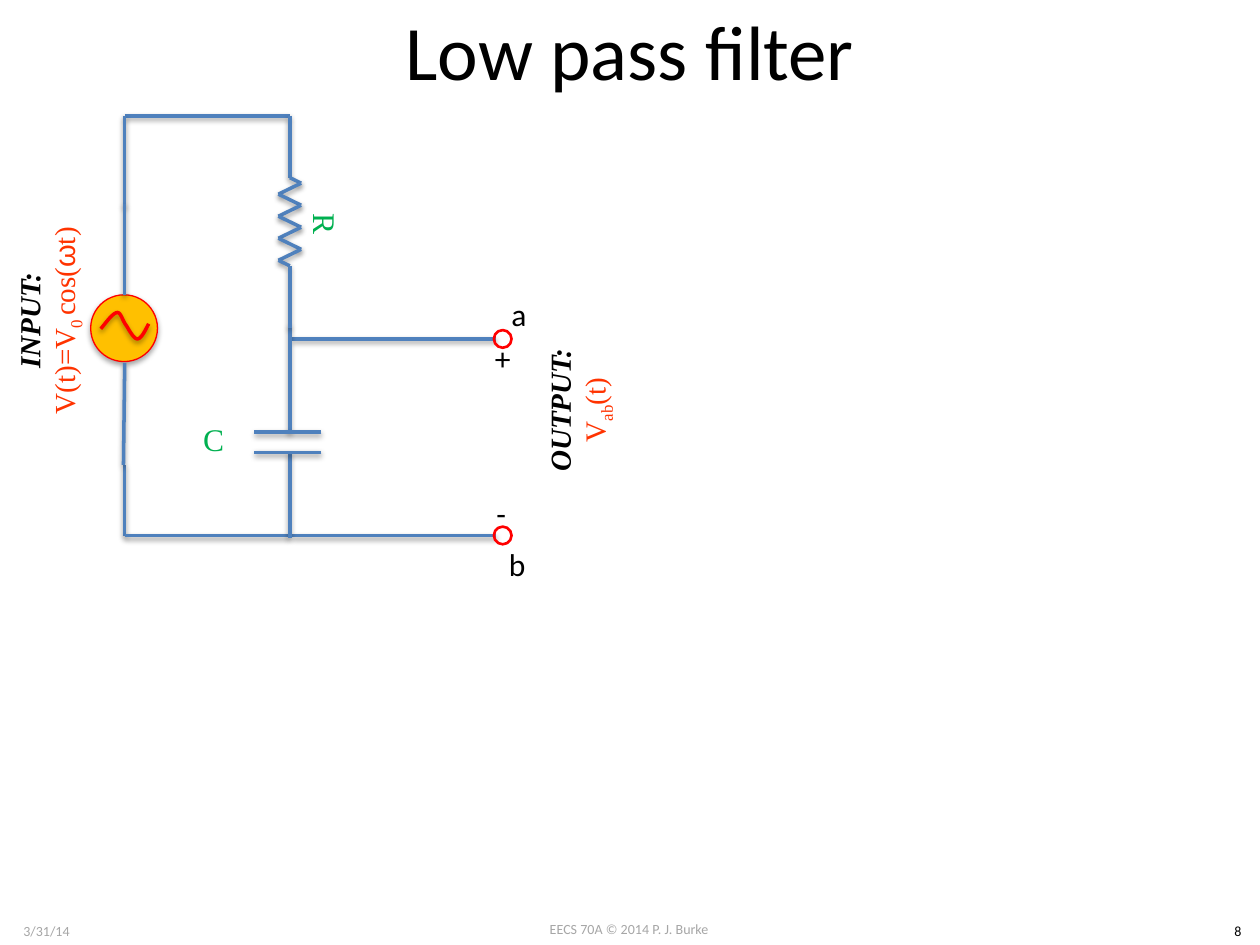
from dataclasses import dataclass
from itertools import pairwise

from lxml import etree
from pptx import Presentation
from pptx.dml.color import RGBColor
from pptx.enum.shapes import MSO_CONNECTOR, MSO_SHAPE
from pptx.enum.text import MSO_ANCHOR, PP_ALIGN
from pptx.oxml.ns import qn
from pptx.util import Emu, Inches, Pt

STRAIGHT, OVAL = MSO_CONNECTOR.STRAIGHT, MSO_SHAPE.OVAL
LEFT, CENTER = PP_ALIGN.LEFT, PP_ALIGN.CENTER
TOP_ANCHOR, MIDDLE = MSO_ANCHOR.TOP, MSO_ANCHOR.MIDDLE

BLACK = RGBColor(0x00, 0x00, 0x00)
GRAY = RGBColor(0xA6, 0xA6, 0xA6)
WIRE_BLUE = RGBColor(0x4F, 0x81, 0xBD)
RED = RGBColor(0xFF, 0x00, 0x00)
ORANGE_RED = RGBColor(0xFF, 0x33, 0x00)
AMBER = RGBColor(0xFF, 0xC0, 0x00)
GREEN = RGBColor(0x00, 0xB0, 0x50)
SANS, SERIF, SYMBOL = "Calibri", "Times New Roman", "Arial"

# Circuit grid in inches: columns, then rows
SOURCE, BRANCH, OUTPUT = 0.99, 2.3, 3.94
TOP, NODE_A, BOTTOM = 0.92, 2.69, 4.25
SOURCE_TOP, SOURCE_BOTTOM = 2.34, 2.88
RESISTOR_TOP, RESISTOR_BOTTOM = 1.41, 2.11
PLATE_TOP, PLATE_BOTTOM = 3.43, 3.59
TERMINAL_SIZE = 0.14

Point = tuple[float, float]
Box = tuple[float, float, float, float]


@dataclass(frozen=True)
class Label:
    text: str
    box: Box
    size: float = 18
    font: str = SANS
    color: RGBColor = BLACK
    align: PP_ALIGN = LEFT
    anchor: MSO_ANCHOR = TOP_ANCHOR
    wrap: bool = False
    rotation: float = 0


@dataclass(frozen=True)
class Part:
    text: str
    font: str = SERIF
    subscript: bool = False


@dataclass(frozen=True)
class Signal:
    heading: str
    formula: tuple[Part, ...]
    box: Box


FOOTERS = [
    Label("EECS 70A © 2014 P. J. Burke", (3.83, 7.26, 2.33, 0.24), 8, color=GRAY, align=CENTER, wrap=True),
    Label("3/31/14", (0, 7.27, 0.74, 0.24), 8, color=GRAY, align=CENTER, wrap=True),
    Label("8", (9.65, 7.27, 0.35, 0.24), 8, align=CENTER, wrap=True),
]
TERMINAL_LABELS = [
    Label("a", (3.96, 2.29, 0.32, 0.4)),
    Label("b", (3.94, 4.28, 0.34, 0.4)),
    Label("+", (3.83, 2.64, 0.33, 0.4)),
    Label("-", (3.84, 3.87, 0.28, 0.4)),
]
CAPACITOR_LABEL = Label("C", (1.1, 3.12, 1.19, 0.73), 18, SERIF, GREEN, CENTER, MIDDLE, True)
RESISTOR_LABEL = Label("R", (1.99, 1.41, 1.19, 0.73), 18, SERIF, GREEN, CENTER, MIDDLE, True, 90)
SIGNALS = [
    Signal("INPUT:",
           (Part("V(t)=V"), Part("0 ", subscript=True), Part("cos("), Part("ω", SYMBOL), Part("t)")),
           (-0.67, 2.24, 2.11, 0.61)),
    Signal("OUTPUT:",
           (Part("V"), Part("ab", subscript=True), Part("(t)")),
           (3.54, 2.95, 2.11, 0.61)),
]
WIRES = [
    ((SOURCE, 3.69), (SOURCE, BOTTOM)),
    ((SOURCE, BOTTOM), (BRANCH, BOTTOM)),
    ((BRANCH, TOP), (SOURCE, TOP)),
    ((SOURCE, 1.64), (SOURCE, TOP)),
    ((BRANCH + 0.02, NODE_A), (OUTPUT, NODE_A)),
    ((BRANCH + 0.02, BOTTOM), (OUTPUT, BOTTOM)),
    ((BRANCH, 2.58), (BRANCH, PLATE_TOP)),
    ((BRANCH, PLATE_BOTTOM), (BRANCH, 4.27)),
    ((2.55, PLATE_TOP), (2.02, PLATE_TOP)),
    ((2.55, PLATE_BOTTOM), (2.02, PLATE_BOTTOM)),
]
# Sine symbol: start point, then two handles and an end point per curve
SINE = [(0.8, 2.61), (0.85, 2.55), (0.89, 2.49), (0.93, 2.48), (0.96, 2.48), (0.97, 2.54),
        (1, 2.58), (1.02, 2.61), (1.06, 2.69), (1.09, 2.69), (1.12, 2.69), (1.15, 2.63), (1.18, 2.57)]


def add_shadow(shape, opacity: int = 38, distance: float = 1.6) -> None:
    effects = etree.SubElement(shape._element.spPr, qn("a:effectLst"))
    outer = etree.SubElement(effects, qn("a:outerShdw"), blurRad=str(Pt(3.1)),
                             dist=str(Pt(distance)), dir="5400000", rotWithShape="0")
    color = etree.SubElement(outer, qn("a:srgbClr"), val=str(BLACK))
    etree.SubElement(color, qn("a:alpha"), val=str(opacity * 1000))


def add_wire(shapes, start: Point, end: Point) -> None:
    wire = shapes.add_connector(STRAIGHT, *(Inches(v) for v in start + end))
    wire.line.color.rgb = WIRE_BLUE
    wire.line.width = Pt(2)
    add_shadow(wire)


def add_circle(shapes, box: Box, width: float):
    circle = shapes.add_shape(OVAL, *(Inches(v) for v in box))
    circle.line.color.rgb = RED
    circle.line.width = Pt(width)
    return circle


def add_text_frame(shapes, box: Box, anchor: MSO_ANCHOR, wrap: bool, rotation: float):
    holder = shapes.add_textbox(*(Inches(v) for v in box))
    holder.rotation = rotation
    frame = holder.text_frame
    frame.word_wrap = wrap
    frame.vertical_anchor = anchor
    return frame


def set_font(font, name: str, size: float, color: RGBColor) -> None:
    font.name = name
    font.size = Pt(size)
    font.color.rgb = color


def add_label(shapes, label: Label) -> None:
    frame = add_text_frame(shapes, label.box, label.anchor, label.wrap, label.rotation)
    paragraph = frame.paragraphs[0]
    paragraph.text = label.text
    paragraph.alignment = label.align
    set_font(paragraph.font, label.font, label.size, label.color)


def add_signal(shapes, signal: Signal) -> None:
    frame = add_text_frame(shapes, signal.box, MIDDLE, True, 270)
    heading, formula = frame.paragraphs[0], frame.add_paragraph()
    heading.text = signal.heading
    heading.font.bold = heading.font.italic = True
    for paragraph, color in ((heading, BLACK), (formula, ORANGE_RED)):
        paragraph.alignment = CENTER
        set_font(paragraph.font, SERIF, 16.6, color)
    for part in signal.formula:
        run = formula.add_run()
        run.text = part.text
        run.font.name = part.font
        if part.subscript:
            run._r.get_or_add_rPr().set("baseline", "-25000")


def curve_points(handles: list[Point], steps: int = 12) -> list[Point]:
    points = [handles[0]]
    for i in range(0, len(handles) - 1, 3):
        for t in (step / steps for step in range(1, steps + 1)):
            weights = ((1 - t) ** 3, 3 * t * (1 - t) ** 2, 3 * t * t * (1 - t), t ** 3)
            points.append(tuple(sum(w * h[axis] for w, h in zip(weights, handles[i:i + 4]))
                                for axis in (0, 1)))
    return points


def add_source(shapes) -> None:
    circle = add_circle(shapes, (0.72, SOURCE_TOP, 0.53, 0.53), 0.75)
    circle.fill.solid()
    circle.fill.fore_color.rgb = AMBER
    add_shadow(circle, 35, 1.8)
    start, *rest = [(Inches(x), Inches(y)) for x, y in curve_points(SINE)]
    builder = shapes.build_freeform(*start, scale=Emu(1))
    builder.add_line_segments(rest, close=False)
    sine = builder.convert_to_shape()
    sine.fill.background()
    sine.line.color.rgb = RED
    sine.line.width = Pt(2)
    add_shadow(sine)
    add_wire(shapes, (SOURCE - 0.01, 3.69), (SOURCE, SOURCE_BOTTOM))
    add_wire(shapes, (SOURCE, SOURCE_TOP), (SOURCE, 1.62))


def add_resistor(shapes) -> None:
    add_label(shapes, RESISTOR_LABEL)
    step = (RESISTOR_BOTTOM - RESISTOR_TOP) / 8
    teeth = [(BRANCH + (-0.09 if i % 2 else 0.09), RESISTOR_TOP + (i + 0.5) * step) for i in range(8)]
    points = [(BRANCH, TOP), (BRANCH, RESISTOR_TOP), *teeth, (BRANCH, RESISTOR_BOTTOM), (BRANCH, 2.6)]
    for start, end in pairwise(points):
        add_wire(shapes, start, end)


def main() -> None:
    deck = Presentation()
    deck.slide_width, deck.slide_height = Inches(10), Inches(7.5)
    slide = deck.slides.add_slide(deck.slide_layouts[5])
    shapes = slide.shapes

    # Title and footers
    title = shapes.title
    title.left, title.top, title.width, title.height = (Inches(v) for v in (0.5, -0.23, 9, 1.25))
    title.text_frame.vertical_anchor = MIDDLE
    heading = title.text_frame.paragraphs[0]
    heading.text = "Low pass filter"
    heading.alignment = CENTER
    set_font(heading.font, SANS, 44, BLACK)

    # Circuit
    for start, end in WIRES:
        add_wire(shapes, start, end)
    add_source(shapes.add_group_shape().shapes)
    add_resistor(shapes.add_group_shape().shapes)
    for row in (NODE_A, BOTTOM):
        terminal = add_circle(shapes, (3.92, row - TERMINAL_SIZE / 2, TERMINAL_SIZE, TERMINAL_SIZE), 1.5)
        terminal.fill.background()
        terminal.shadow.inherit = False

    # Labels
    for label in [*FOOTERS, *TERMINAL_LABELS, CAPACITOR_LABEL]:
        add_label(shapes, label)
    for signal in SIGNALS:
        add_signal(shapes, signal)

    deck.save("out.pptx")


if __name__ == "__main__":
    main()
